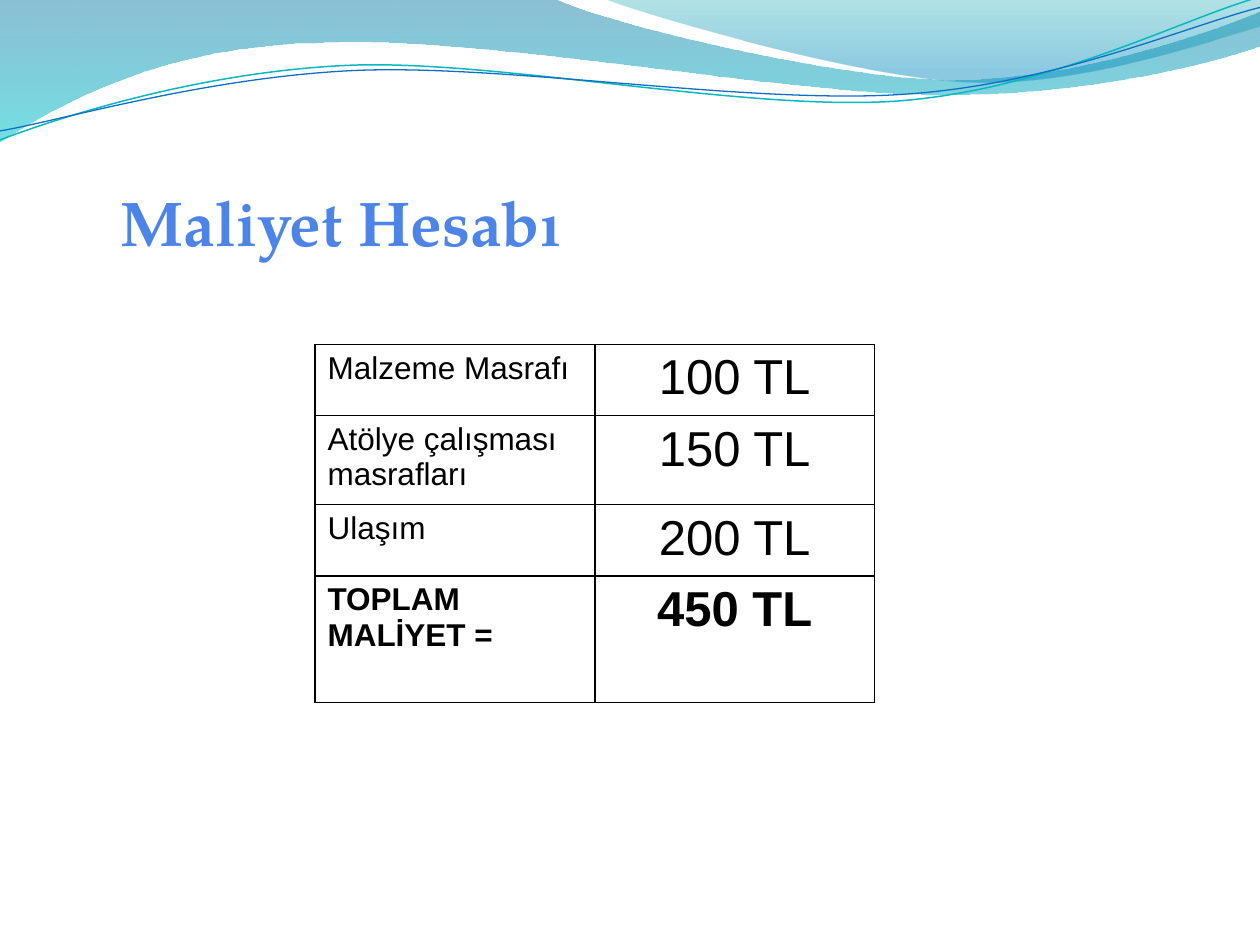
"""Build the cost calculation slide with its wave header and cost table."""
from lxml import etree
from pptx import Presentation, util as u
from pptx.dml.color import RGBColor
from pptx.enum import text
from pptx.oxml import ns

TITLE = "Maliyet Hesabı"
COSTS = [
    ("Malzeme Masrafı", "100 TL", 1.43),
    ("Atölye çalışması masrafları", "150 TL", 1.79),
    ("Ulaşım", "200 TL", 1.43),
    ("TOPLAM MALİYET =", "450 TL", 2.55),
]
COLUMN_STYLES = [(18, text.PP_ALIGN.LEFT), (28, text.PP_ALIGN.CENTER)]
COLUMN_WIDTH = 5.64

WAVES = [
    ((0, -0.03), [
        [(11.18, -0.03)],
        [(12.09, 0.43), (16.87, 1.6), (19.25, 1.6)],
        [(21.67, 1.6), (24.33, 0.66), (25.4, 0.23)],
        [(25.43, 0.91)],
        [(24.97, 1.12), (22.1, 1.93), (18.95, 1.91)],
        [(15.8, 1.91), (9.7, 0.71), (6.53, 0.86)],
        [(3.28, 0.89), (1.17, 2.11), (-0.03, 2.87)],
        [(0, -0.03)],
    ], [(0, "0074A1", 45), (1, "00C6CF", 55)]),
    ((12.17, -0.03), [
        [(12.93, 0.28), (17.32, 1.57), (19.53, 1.65)],
        [(21.74, 1.75), (24.41, 0.81), (25.4, 0.53)],
        [(25.4, 0)],
        [(12.17, -0.03)],
    ], [(0, "00A1A9", 30), (0.8, "008BBF", 45)]),
]
RIBBONS = [
    ((-0.05, 2.22), [
        [(1.19, 1.82), (4.02, 1.04), (7.05, 1.05)],
        [(10.05, 1.07), (15.02, 2.37), (18.08, 2.29)],
        [(21.13, 2.2), (23.86, 0.91), (25.41, 0.55)],
    ], "0AB8BF", 0.85),
    ((-0.04, 2.04), [
        [(1.16, 1.9), (4.17, 1.15), (7.2, 1.16)],
        [(10.25, 1.18), (15.13, 2.23), (18.19, 2.16)],
        [(21.22, 2.11), (23.93, 1.06), (25.45, 0.75)],
    ], "0F6FC6", 0.75),
]
RIBBON_ROTATION = 357.3


def color(value):
    return RGBColor.from_string(value)


def add_outline(slide, start, segments, close):
    """Draw segments of one point as lines and of three points as Bezier curves."""
    corners = [(u.Cm(x), u.Cm(y)) for segment in segments for x, y in segment]
    builder = slide.shapes.build_freeform(u.Cm(start[0]), u.Cm(start[1]))
    builder.add_line_segments(corners, close=close)
    shape = builder.convert_to_shape()
    shape.shadow.inherit = False
    steps = iter(list(shape.element.spPr.iter(ns.qn("a:lnTo"))))
    for segment in segments:
        first, *others = [next(steps) for _ in segment]
        if others:
            first.tag = ns.qn("a:cubicBezTo")
        for step in others:
            first.append(step[0])
            step.getparent().remove(step)
    return shape


def add_wave(slide, start, segments, stops):
    shape = add_outline(slide, start, segments, True)
    shape.line.fill.background()
    shape.fill.gradient()
    shape.fill.gradient_angle = 270
    for stop, (position, value, _) in zip(shape.fill.gradient_stops, stops):
        stop.position = position
        stop.color.rgb = color(value)
    tints = shape.element.spPr.iterfind(".//" + ns.qn("a:srgbClr"))
    for tint, (_, _, opacity) in zip(tints, stops):
        etree.SubElement(tint, ns.qn("a:alpha"), val=str(opacity * 1000))


def add_ribbon(slide, start, segments, value, width):
    shape = add_outline(slide, start, segments, False)
    shape.rotation = RIBBON_ROTATION
    shape.fill.background()
    shape.line.color.rgb = color(value)
    shape.line.width = u.Pt(width)


def add_title(slide):
    title = slide.shapes.title
    title.left, title.top, title.width, title.height = map(u.Cm, (2.18, 3.58, 9.5, 1.8))
    frame = title.text_frame
    frame.text = TITLE
    frame.word_wrap = False
    frame.auto_size = text.MSO_AUTO_SIZE.SHAPE_TO_FIT_TEXT
    frame.vertical_anchor = text.MSO_ANCHOR.TOP
    paragraph = frame.paragraphs[0]
    paragraph.alignment = text.PP_ALIGN.LEFT
    font = paragraph.font
    font.name, font.size, font.bold = "TeX Gyre Pagella", u.Pt(36), True
    font.color.rgb = color("4C84E8")


def add_borders(cell, value, width):
    properties = cell._tc.get_or_add_tcPr()
    for index, side in enumerate(("lnL", "lnR", "lnT", "lnB")):
        line = etree.Element(ns.qn("a:" + side), w=str(u.Pt(width)))
        fill = etree.SubElement(line, ns.qn("a:solidFill"))
        etree.SubElement(fill, ns.qn("a:srgbClr"), val=value)
        properties.insert(index, line)


def add_cost_table(slide):
    heights = [height for _, _, height in COSTS]
    frame = slide.shapes.add_table(
        len(COSTS), len(COLUMN_STYLES), u.Cm(6.35), u.Cm(6.94),
        u.Cm(COLUMN_WIDTH * len(COLUMN_STYLES)), u.Cm(sum(heights)))
    table = frame.table
    table.first_row = table.horz_banding = False
    for column in table.columns:
        column.width = u.Cm(COLUMN_WIDTH)
    for index, (label, amount, height) in enumerate(COSTS):
        table.rows[index].height = u.Cm(height)
        for cell, content, (size, alignment) in zip(
                table.rows[index].cells, (label, amount), COLUMN_STYLES):
            cell.text = content
            cell.fill.background()
            add_borders(cell, "000000", 1)
            paragraph = cell.text_frame.paragraphs[0]
            paragraph.alignment = alignment
            font = paragraph.font
            font.name, font.size = "Arial", u.Pt(size)
            font.bold = index == len(COSTS) - 1
            font.color.rgb = color("000000")


def main():
    presentation = Presentation()
    presentation.slide_width, presentation.slide_height = u.Cm(25.4), u.Cm(19.05)
    slide = presentation.slides.add_slide(presentation.slide_layouts[5])
    for wave in WAVES:
        add_wave(slide, *wave)
    for ribbon in RIBBONS:
        add_ribbon(slide, *ribbon)
    add_title(slide)
    add_cost_table(slide)
    presentation.save("out.pptx")


if __name__ == "__main__":
    main()
